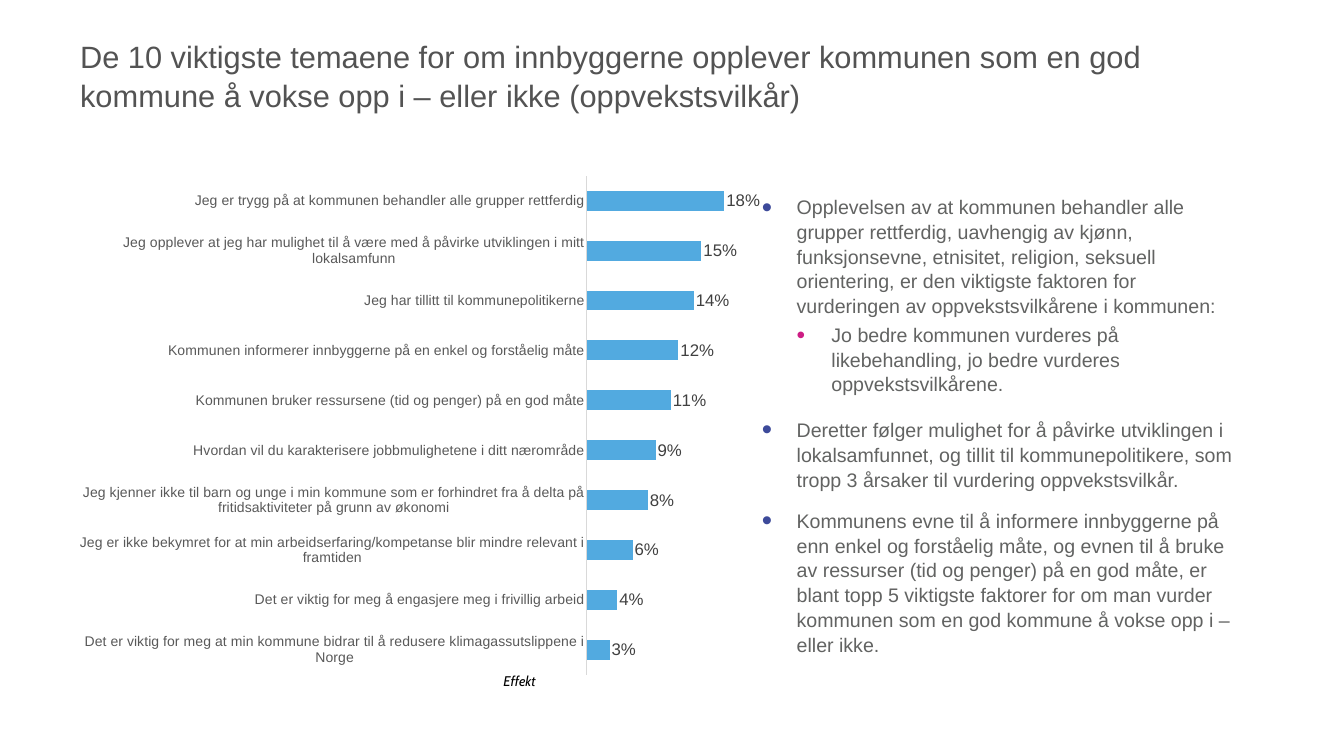
from dataclasses import dataclass

from lxml.etree import SubElement
from pptx import Presentation
from pptx.chart.chart import Chart
from pptx.chart.data import CategoryChartData as Data
from pptx.dml.color import RGBColor
from pptx.enum.chart import XL_CHART_TYPE as Kind
from pptx.enum.chart import XL_LABEL_POSITION as Spot
from pptx.enum.chart import XL_TICK_MARK as Tick
from pptx.enum.text import MSO_ANCHOR as Anchor
from pptx.enum.text import MSO_AUTO_SIZE as Fit
from pptx.enum.text import PP_ALIGN as Align
from pptx.oxml.ns import qn
from pptx.slide import Slide
from pptx.text.text import Font, TextFrame
from pptx.text.text import _Paragraph as Para
from pptx.util import Inches, Pt

BLACK = RGBColor(0x00, 0x00, 0x00)
TITLE = RGBColor(0x53, 0x53, 0x53)
BODY = RGBColor(0x62, 0x63, 0x62)
AXIS = RGBColor(0x59, 0x59, 0x59)
LABEL = RGBColor(0x40, 0x40, 0x40)
RULE = RGBColor(0xD9, 0xD9, 0xD9)
BAR = RGBColor(0x52, 0xAA, 0xE0)
NAVY = RGBColor(0x3D, 0x4A, 0x9A)
PINK = RGBColor(0xCD, 0x1D, 0x84)


@dataclass
class Theme:
    text: str
    share: float


@dataclass
class Point:
    text: str
    level: int = 0


@dataclass
class Style:
    color: RGBColor
    size: int
    before: int
    after: int


THEMES = [
    Theme("Det er viktig for meg at min kommune bidrar til å redusere klimagassutslippene i Norge", 0.03),
    Theme("Det er viktig for meg å engasjere meg i frivillig arbeid", 0.04),
    Theme("Jeg er ikke bekymret for at min arbeidserfaring/kompetanse blir mindre relevant i framtiden", 0.06),
    Theme("Jeg kjenner ikke til barn og unge i min kommune som er forhindret fra å delta på "
          "fritidsaktiviteter på grunn av økonomi", 0.08),
    Theme("Hvordan vil du karakterisere jobbmulighetene i ditt nærområde", 0.09),
    Theme("Kommunen bruker ressursene (tid og penger) på en god måte", 0.11),
    Theme("Kommunen informerer innbyggerne på en enkel og forståelig måte", 0.12),
    Theme("Jeg har tillitt til kommunepolitikerne", 0.14),
    Theme("Jeg opplever at jeg har mulighet til å være med å påvirke utviklingen i mitt lokalsamfunn", 0.15),
    Theme("Jeg er trygg på at kommunen behandler alle grupper rettferdig", 0.18),
]
POINTS = [
    Point("Opplevelsen av at kommunen behandler alle grupper rettferdig, uavhengig av kjønn, "
          "funksjonsevne, etnisitet, religion, seksuell orientering, er den viktigste faktoren for "
          "vurderingen av oppvekstsvilkårene i kommunen:"),
    Point("Jo bedre kommunen vurderes på likebehandling, jo bedre vurderes oppvekstsvilkårene.", 1),
    Point("Deretter følger mulighet for å påvirke utviklingen i lokalsamfunnet, og tillit til "
          "kommunepolitikere, som tropp 3 årsaker til vurdering oppvekstsvilkår."),
    Point("Kommunens evne til å informere innbyggerne på enn enkel og forståelig måte, og evnen til å "
          "bruke av ressurser (tid og penger) på en god måte, er blant topp 5 viktigste faktorer for om "
          "man vurder kommunen som en god kommune å vokse opp i – eller ikke."),
]
STYLES = [Style(NAVY, 150, 18, 6), Style(PINK, 125, 0, 12)]


def set_font(font: Font, size: float, color: RGBColor, name: str = "Arial") -> None:
    font.name, font.size = name, Pt(size)
    font.color.rgb = color


def add_box(slide: Slide, left: float, top: float, width: float, height: float,
            anchor: Anchor = Anchor.TOP, wrap: bool = True) -> TextFrame:
    box = slide.shapes.add_textbox(Inches(left), Inches(top), Inches(width), Inches(height))
    frame = box.text_frame
    frame.word_wrap, frame.vertical_anchor = wrap, anchor
    frame.margin_left = frame.margin_right = Inches(0.06)
    frame.margin_top = frame.margin_bottom = Inches(0.06)
    return frame


def add_bullet(para: Para, level: int, style: Style) -> None:
    props = para._p.get_or_add_pPr()
    props.set("marL", str(Inches(0.69 * (level + 1))))
    props.set("indent", str(-Inches(0.69)))
    SubElement(SubElement(props, qn("a:buClr")), qn("a:srgbClr"), val=str(style.color))
    SubElement(props, qn("a:buSzPct"), val=str(style.size * 1000))
    SubElement(props, qn("a:buFont"), typeface="Arial")
    SubElement(props, qn("a:buChar"), char="•")


def add_points(slide: Slide) -> None:
    frame = add_box(slide, 15.06, 3.79, 9.67, 9.4)
    for i, point in enumerate(POINTS):
        para = frame.add_paragraph() if i else frame.paragraphs[0]
        style = STYLES[point.level]
        para.text, para.level = point.text, point.level
        add_bullet(para, point.level, style)
        para.line_spacing = 1.05
        para.space_before = Pt(style.before if i else 0)
        para.space_after = Pt(style.after)
        set_font(para.font, 28, BODY)


def place_plot(chart: Chart, left: float, top: float, width: float, height: float) -> None:
    area = chart._chartSpace.chart.plotArea
    for old in area.findall(qn("c:layout")):
        area.remove(old)
    layout = SubElement(area, qn("c:layout"))
    area.insert(0, layout)
    manual = SubElement(layout, qn("c:manualLayout"))
    rules = {"layoutTarget": "inner", "xMode": "edge", "yMode": "edge",
             "x": left, "y": top, "w": width, "h": height}
    for tag, val in rules.items():
        SubElement(manual, qn(f"c:{tag}"), val=str(val))


def add_bars(slide: Slide) -> None:
    data = Data(number_format="0%")
    data.categories = [theme.text for theme in THEMES]
    data.add_series("Series 1", [theme.share for theme in THEMES])
    chart = slide.shapes.add_chart(Kind.BAR_CLUSTERED, Inches(1.36), Inches(3.28),
                                   Inches(16.86), Inches(10.32), data).chart
    chart.has_legend = chart.has_title = False
    set_font(chart.font, 24, BLACK)
    place_plot(chart, 0.61, 0.02, 0.36, 0.96)

    cats = chart.category_axis
    cats.major_tick_mark = cats.minor_tick_mark = Tick.NONE
    set_font(cats.tick_labels.font, 20, AXIS)
    cats.format.line.color.rgb = RULE
    cats.format.line.width = Pt(0.75)
    vals = chart.value_axis
    vals.minimum_scale, vals.maximum_scale = 0, 0.4
    vals.has_major_gridlines = vals.visible = False

    plot = chart.plots[0]
    plot.gap_width, plot.vary_by_categories = 150, False
    fill = plot.series[0].format.fill
    fill.solid()
    fill.fore_color.rgb = BAR
    plot.has_data_labels = True
    labels = plot.data_labels
    labels.show_value, labels.position = True, Spot.OUTSIDE_END
    labels.number_format, labels.number_format_is_linked = "0%", False
    set_font(labels.font, 24, LABEL)


def add_title(slide: Slide) -> None:
    para = add_box(slide, 1.53, 0.47, 23.66, 2.04, Anchor.MIDDLE).paragraphs[0]
    para.text = ("De 10 viktigste temaene for om innbyggerne opplever kommunen som en god kommune "
                 "å vokse opp i – eller ikke (oppvekstsvilkår)")
    para.line_spacing = 1.05
    set_font(para.font, 44, TITLE)


def add_note(slide: Slide) -> None:
    frame = add_box(slide, 9.92, 13.28, 0.78, 0.45, Anchor.MIDDLE, False)
    frame.auto_size = Fit.SHAPE_TO_FIT_TEXT
    para = frame.paragraphs[0]
    para.text, para.alignment = "Effekt", Align.CENTER
    set_font(para.font, 20, BLACK, "Cabin")
    para.font.italic = True


def main() -> None:
    """Build the slide on the themes behind a good place to grow up."""
    deck = Presentation()
    deck.slide_width, deck.slide_height = Inches(26.67), Inches(15)
    slide = deck.slides.add_slide(deck.slide_layouts[6])
    add_title(slide)
    add_bars(slide)
    add_points(slide)
    add_note(slide)
    deck.save("out.pptx")


if __name__ == "__main__":
    main()
